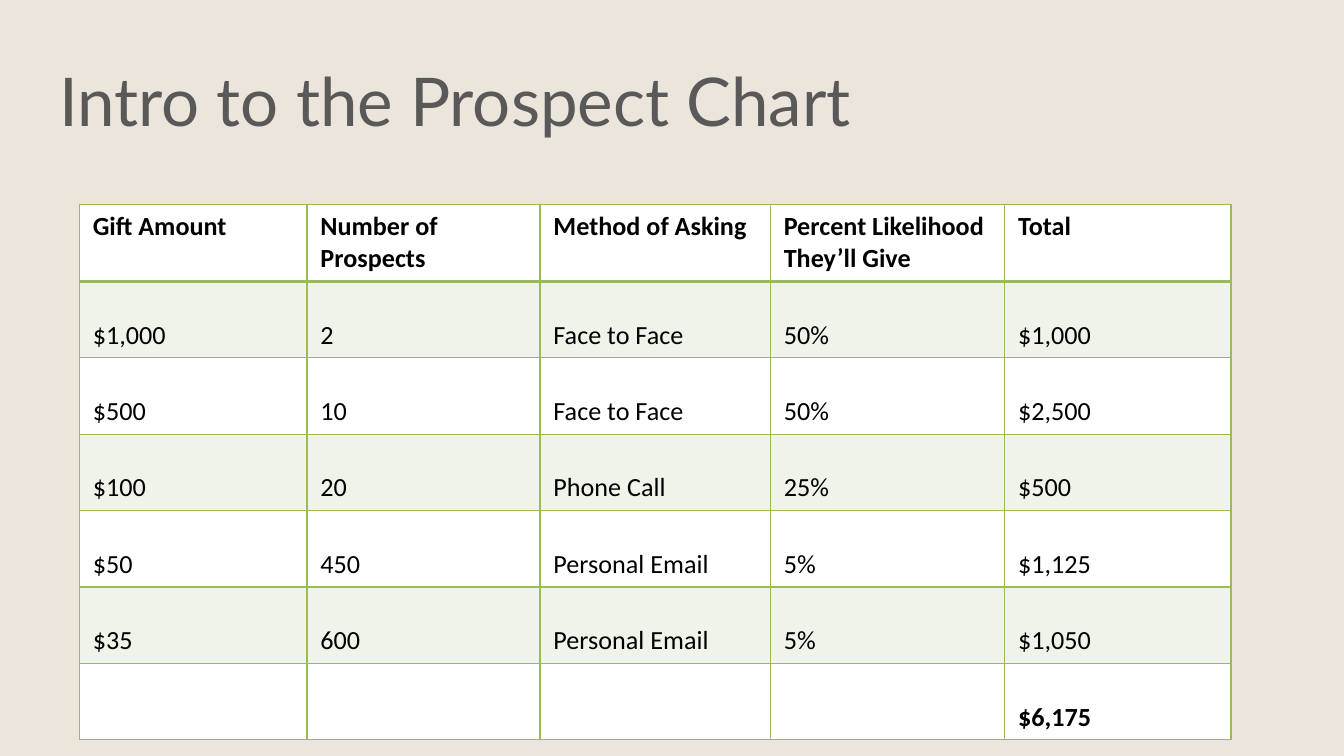
import pptx
import pptx.dml.color
import pptx.enum.text
import pptx.oxml.ns
import pptx.util
from lxml import etree

Inches = pptx.util.Inches
Pt = pptx.util.Pt
COLORS = {
    "background": "EBE5DB",
    "title": "595959",
    "text": "000000",
    "border": "9BBB59",
    "plain": "FFFFFF",
    "band": "EFF3EA",
}
COLUMN_SHARES = [1.69, 1.73, 1.71, 1.74, 1.68]
PROSPECTS = [
    ["Gift Amount", "Number of Prospects", "Method of Asking",
     "Percent Likelihood They’ll Give", "Total"],
    ["$1,000", "2", "Face to Face", "50%", "$1,000"],
    ["$500", "10", "Face to Face", "50%", "$2,500"],
    ["$100", "20", "Phone Call", "25%", "$500"],
    ["$50", "450", "Personal Email", "5%", "$1,125"],
    ["$35", "600", "Personal Email", "5%", "$1,050"],
    ["", "", "", "", "$6,175"],
]


def color(name):
    return pptx.dml.color.RGBColor.from_string(COLORS[name])


def write_text(text_frame, text, font="Calibri", size=14, fill="text",
               bold=False, line_spacing=1.0):
    paragraph = text_frame.paragraphs[0]
    paragraph.alignment = pptx.enum.text.PP_ALIGN.LEFT
    paragraph.line_spacing = line_spacing
    paragraph.font.size = Pt(size)
    if not text:
        return
    run = paragraph.add_run()
    run.text = text
    run.font.name = font
    run.font.size = Pt(size)
    run.font.bold = bold
    run.font.color.rgb = color(fill)


def add_borders(cell, **widths):
    qn = pptx.oxml.ns.qn
    properties = cell._tc.get_or_add_tcPr()
    for side in ("L", "R", "T", "B"):
        width = Pt(widths.get(side, 0.75))
        line = etree.SubElement(properties, qn(f"a:ln{side}"), w=str(int(width)))
        fill = etree.SubElement(line, qn("a:solidFill"))
        etree.SubElement(fill, qn("a:srgbClr"), val=COLORS["border"])


def place_title(slide, left, top, width, height):
    title = slide.shapes.title
    title.left, title.top = Inches(left), Inches(top)
    title.width, title.height = Inches(width), Inches(height)
    frame = title.text_frame
    frame.word_wrap = True
    frame.auto_size = pptx.enum.text.MSO_AUTO_SIZE.NONE
    frame.vertical_anchor = pptx.enum.text.MSO_ANCHOR.TOP
    frame.margin_left = frame.margin_right = Inches(0.1)
    frame.margin_top = frame.margin_bottom = Inches(0.1)
    write_text(frame, "Intro to the Prospect Chart",
               font="Lato", size=36, fill="title")


def add_prospect_table(slide, left, top, width, height):
    row_count = len(PROSPECTS)
    table = slide.shapes.add_table(
        row_count, len(COLUMN_SHARES), Inches(left), Inches(top),
        Inches(width), Inches(height)).table
    table.first_row = False
    table.horz_banding = False
    for column, share in zip(table.columns, COLUMN_SHARES):
        column.width = Inches(width * share / sum(COLUMN_SHARES))
    for row_index, values in enumerate(PROSPECTS):
        is_header = row_index == 0
        is_total = row_index == row_count - 1
        for column_index, value in enumerate(values):
            cell = table.cell(row_index, column_index)
            add_borders(cell, T=1.5 if row_index == 1 else 0.75,
                        B=1.5 if is_header else 0.75)
            cell.fill.solid()
            cell.fill.fore_color.rgb = color("band" if row_index % 2 else "plain")
            cell.margin_left = cell.margin_right = Inches(0.1)
            cell.margin_top = cell.margin_bottom = Inches(0.05)
            write_text(cell.text_frame, value, bold=is_header or is_total,
                       line_spacing=1.0 if is_header else 1.98)


def main():
    presentation = pptx.Presentation()
    presentation.slide_width = Inches(10)
    presentation.slide_height = presentation.slide_width * 9 // 16
    slide = presentation.slides.add_slide(presentation.slide_layouts[5])
    slide.background.fill.solid()
    slide.background.fill.fore_color.rgb = color("background")
    place_title(slide, 0.34, 0.34, 9.32, 0.63)
    add_prospect_table(slide, 0.59, 1.52, 8.57, 3.94)
    presentation.save("out.pptx")


if __name__ == "__main__":
    main()
